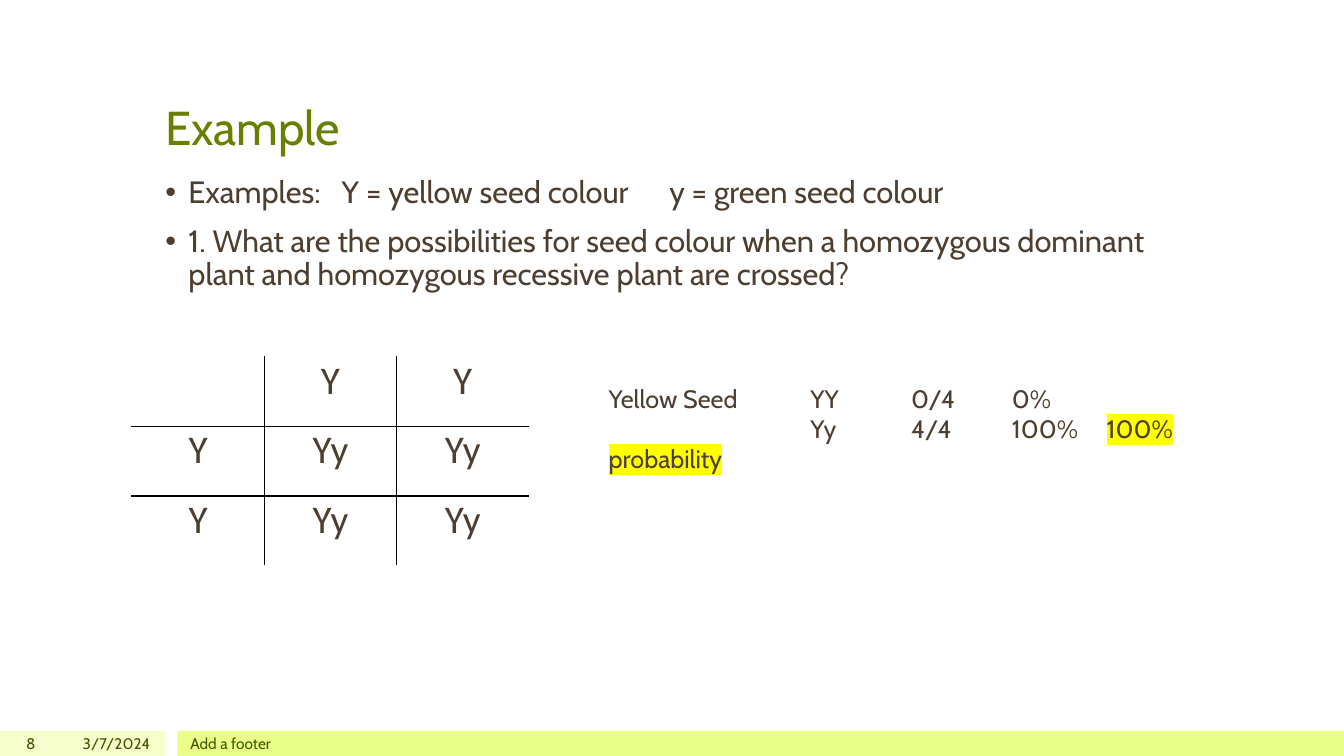
from lxml.etree import SubElement
from pptx import Presentation
from pptx.dml.color import RGBColor
from pptx.enum.shapes import MSO_SHAPE
from pptx.enum.text import MSO_ANCHOR, MSO_AUTO_SIZE, PP_ALIGN
from pptx.oxml.ns import qn
from pptx.util import Pt

OLIVE = RGBColor(0x68, 0x80, 0x00)
BROWN = RGBColor(0x4D, 0x3E, 0x2F)
MOSS = RGBColor(0x45, 0x55, 0x00)
PALE = RGBColor(0xF6, 0xFF, 0xCC)
LIME = RGBColor(0xE9, 0xFF, 0x88)
YELLOW = RGBColor(0xFF, 0xFF, 0x00)
BLACK = RGBColor(0, 0, 0)

# Content
TITLE = "Example"
POINTS = [
    "Examples:\tY = yellow seed colour\ty = green seed colour",
    "1. What are the possibilities for seed colour when a homozygous "
    "dominant plant and homozygous recessive plant are crossed?",
]
SQUARE = [("", "Y", "Y"), ("Y", "Yy", "Yy"), ("Y", "Yy", "Yy")]
ODDS = [
    [("Yellow Seed\tYY\t0/4\t0%", None)],
    [("\tYy\t4/4\t100%\t", None), ("100% probability", YELLOW)],
]
# Footer: left, width, text, alignment
FOOT = [
    (0, 32.4, "8", PP_ALIGN.RIGHT),
    (36, 78.5, "3/7/2024", PP_ALIGN.RIGHT),
    (128.9, 720, "Add a footer", PP_ALIGN.LEFT),
]
# Bands: left, width, colour
BANDS = [(0, 118.1, PALE), (126.7, 833.3, LIME)]

# Places in points
WIDE, HIGH, BAND = 960, 540, 18
LEFT, SPAN = 110.9, 738
CELL_W, CELL_H = 94.5, 49.7
POINT_TABS = (126, 360)
ODDS_TABS = (144, 216, 288, 355.7)


def write(para, text, size=18, color=BROWN, font="Cabin",
          align=PP_ALIGN.LEFT, mark=None):
    para.alignment = align
    run = para.add_run()
    run.text = text
    run.font.size = Pt(size)
    run.font.name = font
    run.font.color.rgb = color
    if mark:
        tag = run.font.fill._xPr.find(qn("a:solidFill"))
        light = SubElement(run._r.get_or_add_rPr(), qn("a:highlight"))
        SubElement(light, qn("a:srgbClr"), val=str(mark))
        tag.addnext(light)


def place(shape, x, y, w, h):
    shape.left, shape.top, shape.width, shape.height = map(Pt, (x, y, w, h))


def set_tabs(props, stops):
    tabs = SubElement(props, qn("a:tabLst"))
    for stop in stops:
        SubElement(tabs, qn("a:tab"), pos=str(Pt(stop)), algn="l")


def add_line(cell, side):
    line = SubElement(cell._tc.get_or_add_tcPr(), qn("a:" + side), w=str(Pt(1)))
    fill = SubElement(line, qn("a:solidFill"))
    SubElement(fill, qn("a:srgbClr"), val=str(BLACK))


def add_text(slide, x, y, w, h):
    box = slide.shapes.add_textbox(Pt(x), Pt(y), Pt(w), Pt(h))
    box.text_frame.word_wrap = True
    return box.text_frame


def main():
    deck = Presentation()
    deck.slide_width, deck.slide_height = Pt(WIDE), Pt(HIGH)
    slide = deck.slides.add_slide(deck.slide_layouts[1])
    title, body = slide.placeholders

    # Title
    place(title, LEFT, 21.6, SPAN, 92.9)
    title.text_frame.vertical_anchor = MSO_ANCHOR.BOTTOM
    title.text_frame.auto_size = MSO_AUTO_SIZE.NONE
    write(title.text_frame.paragraphs[0], TITLE, size=34, color=OLIVE)

    # Bullet points
    place(body, LEFT, 123.1, SPAN, 363.6)
    frame = body.text_frame
    frame.auto_size = MSO_AUTO_SIZE.NONE
    for i, text in enumerate(POINTS):
        para = frame.add_paragraph() if i else frame.paragraphs[0]
        para.line_spacing = 0.9
        para.space_before = Pt(11)
        write(para, text, size=22)
        props = para._p.get_or_add_pPr()
        props.set("marL", str(Pt(16.5)))
        props.set("indent", str(Pt(-16.5)))
        SubElement(props, qn("a:buFont"), typeface="Arial")
        SubElement(props, qn("a:buChar"), char="•")
        if "\t" in text:
            set_tabs(props, POINT_TABS)

    # Punnett square
    count = len(SQUARE)
    grid = slide.shapes.add_table(count, count, Pt(94.3), Pt(254.9),
                                  Pt(CELL_W * count), Pt(CELL_H * count)).table
    grid.first_row = grid.horz_banding = False
    for r, row in enumerate(SQUARE):
        grid.rows[r].height = Pt(CELL_H)
        grid.columns[r].width = Pt(CELL_W)
        for c, text in enumerate(row):
            cell = grid.cell(r, c)
            cell.margin_left = cell.margin_right = Pt(5)
            cell.margin_top = cell.margin_bottom = 0
            sides = {"lnL": c > 0, "lnR": c < count - 1,
                     "lnT": r > 0, "lnB": r < count - 1}
            for side, inner in sides.items():
                if inner:
                    add_line(cell, side)
            cell.fill.background()
            if text:
                write(cell.text_frame.paragraphs[0], text, size=28,
                      font="Calibri", align=PP_ALIGN.CENTER)

    # Probabilities
    frame = add_text(slide, 427.7, 270, 488.9, 51)
    for i, runs in enumerate(ODDS):
        para = frame.add_paragraph() if i else frame.paragraphs[0]
        for text, mark in runs:
            write(para, text, mark=mark)
        set_tabs(para._p.get_or_add_pPr(), ODDS_TABS)

    # Footer bands and text
    for x, w, color in BANDS:
        band = slide.shapes.add_shape(MSO_SHAPE.RECTANGLE, Pt(x),
                                      Pt(HIGH - BAND), Pt(w), Pt(BAND))
        band.shadow.inherit = False
        band.fill.solid()
        band.fill.fore_color.rgb = color
        band.line.fill.background()
    for x, w, text, align in FOOT:
        frame = add_text(slide, x, HIGH - BAND, w, BAND)
        frame.vertical_anchor = MSO_ANCHOR.MIDDLE
        write(frame.paragraphs[0], text, size=11, color=MOSS, align=align)

    deck.save("out.pptx")


if __name__ == "__main__":
    main()
